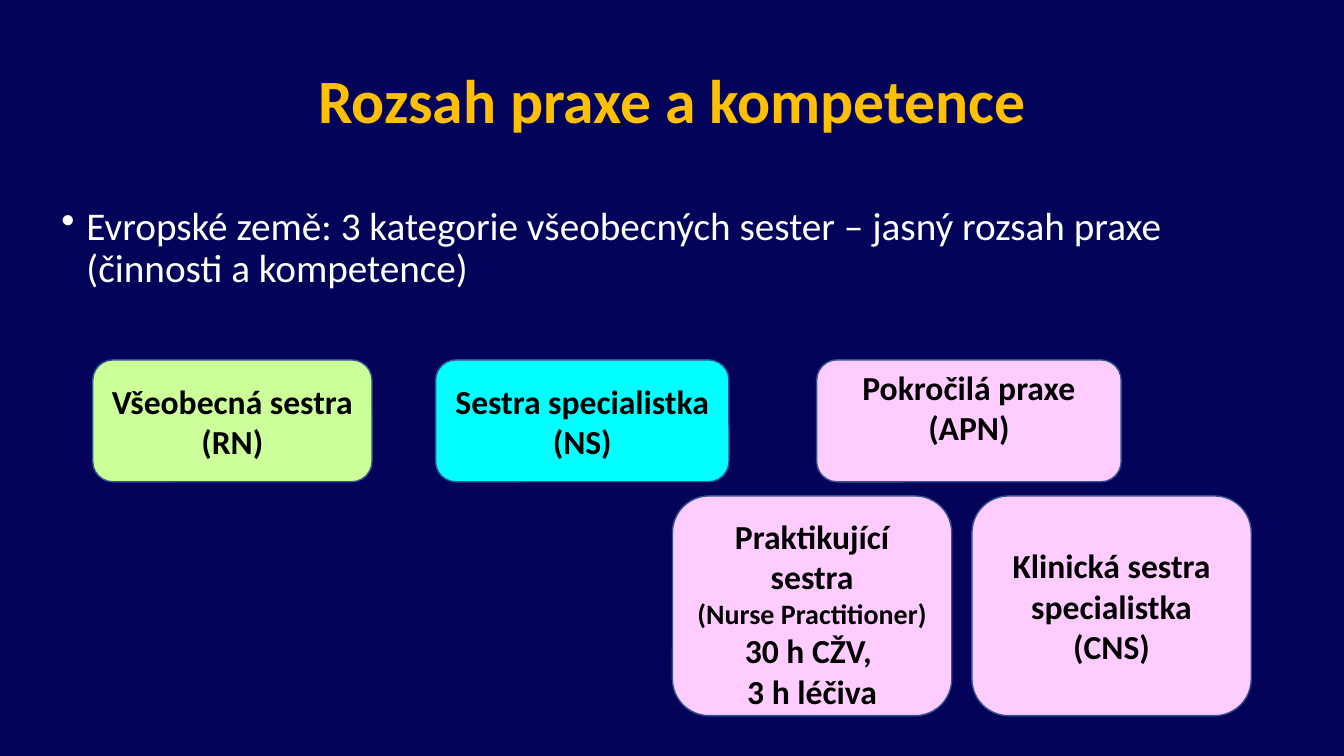
import pptx
import pptx.util
import pptx.dml.color
import pptx.enum.shapes
import pptx.enum.text
import pptx.oxml
import pptx.oxml.ns

Inches = pptx.util.Inches
Pt = pptx.util.Pt
Color = pptx.dml.color.RGBColor
Align = pptx.enum.text.PP_ALIGN
Anchor = pptx.enum.text.MSO_ANCHOR

NAVY = Color(0x03, 0x03, 0x59)
GOLD = Color(0xFF, 0xC0, 0x00)
WHITE = Color(0xFF, 0xFF, 0xFF)
BLACK = Color(0x00, 0x00, 0x00)
GREEN = Color(0xCC, 0xFF, 0x99)
CYAN = Color(0x00, 0xFF, 0xFF)
PINK = Color(0xFF, 0xCC, 0xFF)
EDGE = Color(0x32, 0x54, 0x91)


def style(para, text, size, color, bold=True, align=Align.CENTER):
    para.text = text
    para.alignment = align
    font = para.font
    font.name = "Calibri"
    font.size = Pt(size)
    font.bold = bold
    font.color.rgb = color


def add_text(slide, place, anchor):
    frame = slide.shapes.add_textbox(*map(Inches, place)).text_frame
    frame.word_wrap = True
    frame.vertical_anchor = anchor
    para = frame.paragraphs[0]
    para.line_spacing = 0.9
    return para


def add_title(slide, text):
    para = add_text(slide, (0.92, 0.4, 11.5, 1.25), Anchor.MIDDLE)
    style(para, text, 44, GOLD)


def add_bullet(slide, text):
    para = add_text(slide, (0.51, 2, 12.3, 1.2), Anchor.TOP)
    style(para, text, 28, WHITE, False, Align.LEFT)
    para.space_before = Pt(10)
    props = para._p.get_or_add_pPr()
    props.set("marL", str(Inches(0.25)))
    props.set("indent", str(-Inches(0.25)))
    mark = pptx.oxml.parse_xml(
        f'<a:buChar {pptx.oxml.ns.nsdecls("a")} char="•"/>')
    props.insert_element_before(mark, "a:tabLst", "a:defRPr", "a:extLst")


def add_card(slide, place, fill, lines, top=0.05, bottom=0.05):
    kind = pptx.enum.shapes.MSO_SHAPE.ROUNDED_RECTANGLE
    card = slide.shapes.add_shape(kind, *map(Inches, place))
    card.shadow.inherit = False
    card.fill.solid()
    card.fill.fore_color.rgb = fill
    card.line.color.rgb = EDGE
    card.line.width = Pt(1)
    frame = card.text_frame
    frame.word_wrap = True
    frame.vertical_anchor = Anchor.MIDDLE
    frame.margin_top = Inches(top)
    frame.margin_bottom = Inches(bottom)
    for index, (text, size) in enumerate(lines):
        para = frame.add_paragraph() if index else frame.paragraphs[0]
        style(para, text, size, BLACK)


def main():
    deck = pptx.Presentation()
    deck.slide_width = Inches(13.33)
    deck.slide_height = Inches(7.5)
    slide = deck.slides.add_slide(deck.slide_layouts[6])
    back = slide.background.fill
    back.solid()
    back.fore_color.rgb = NAVY

    add_title(slide, "Rozsah praxe a kompetence")
    add_bullet(slide, "Evropské země: 3 kategorie všeobecných sester – "
                      "jasný rozsah praxe (činnosti a kompetence)")

    row, high = 3.57, 1.21
    add_card(slide, (0.92, row, 2.77, high), GREEN,
             [("Všeobecná sestra ", 24), ("(RN)", 24)])
    add_card(slide, (4.32, row, 2.91, high), CYAN,
             [("Sestra specialistka", 24), ("(NS)", 24)])
    add_card(slide, (8.1, row, 3.02, high), PINK,
             [("Pokročilá praxe", 24), ("(APN)", 24)], 0, 0.28)

    row, wide, high = 4.92, 2.77, 2.18
    add_card(slide, (6.67, row, wide, high), PINK,
             [("Praktikující sestra", 24), ("(Nurse Practitioner)", 20),
              ("30 h CŽV, ", 24), ("3 h léčiva", 24)], 0.15, 0)
    add_card(slide, (9.64, row, wide, high), PINK,
             [("Klinická sestra specialistka", 24), ("(CNS)", 24)])

    deck.save("out.pptx")


if __name__ == "__main__":
    main()
